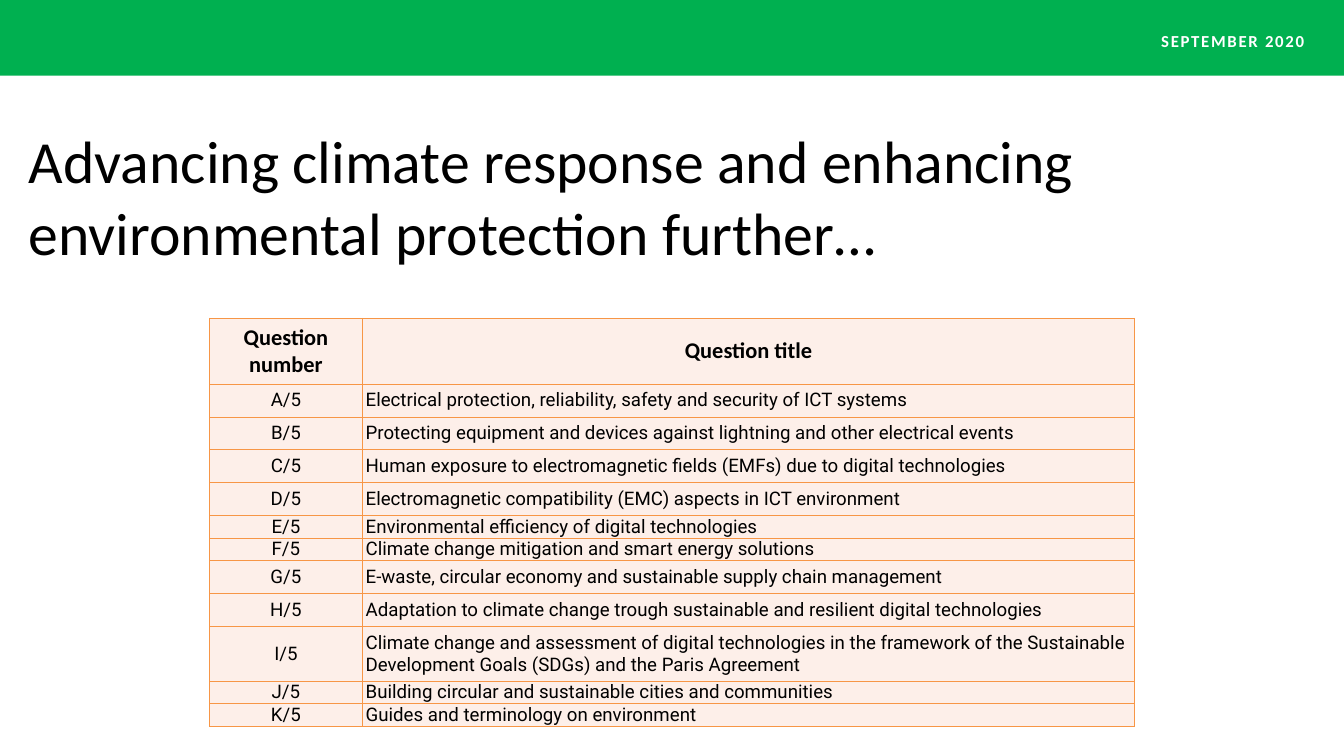
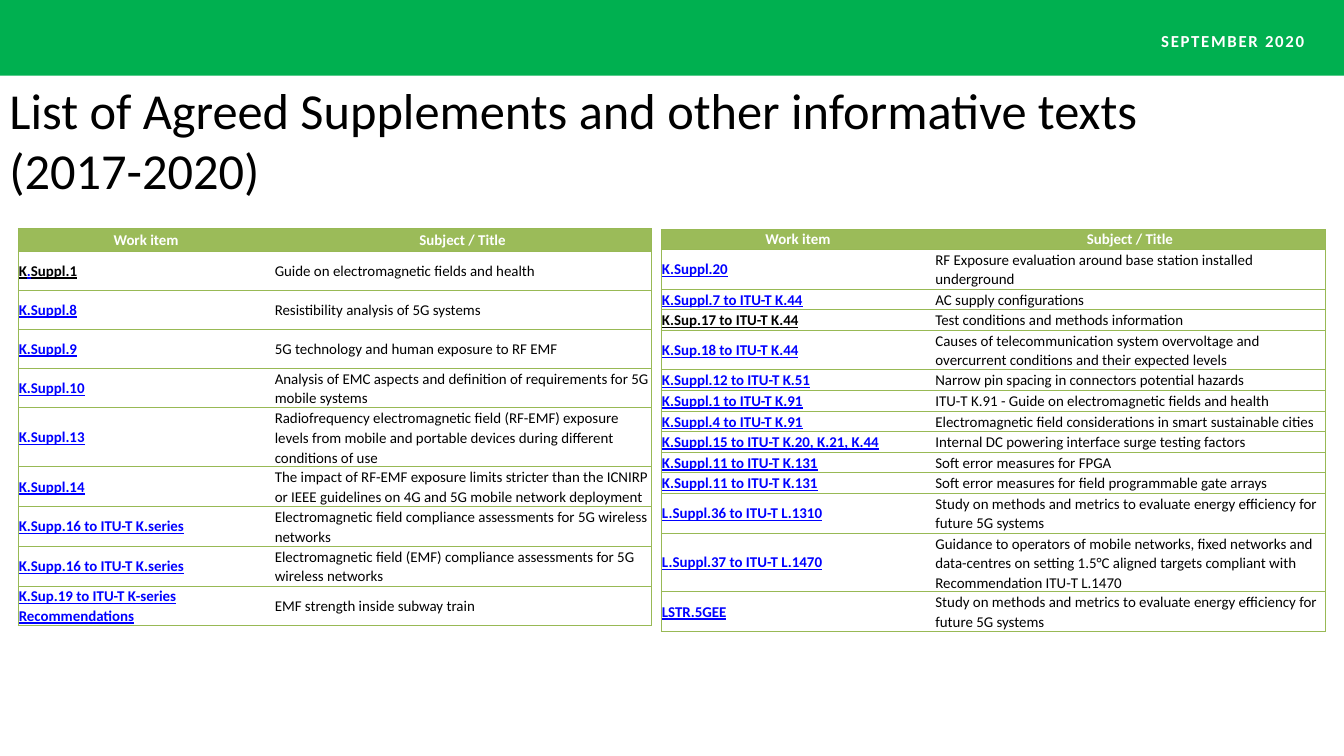
from dataclasses import dataclass

from lxml.etree import SubElement
from pptx import Presentation
from pptx.dml.color import RGBColor
from pptx.enum.shapes import MSO_SHAPE
from pptx.enum.text import MSO_ANCHOR, MSO_AUTO_SIZE, PP_ALIGN
from pptx.oxml.ns import qn
from pptx.util import Pt

# Content
DATE = "SEPTEMBER 2020"

QUESTIONS_TITLE = "Advancing climate response and enhancing environmental protection further…"
QUESTIONS_HEAD = ("Question number", "Question title")
# Row height in points, number, title
QUESTIONS = [
    (35.3, "A/5", "Electrical protection, reliability, safety and security of ICT systems"),
    (35.3, "B/5", "Protecting equipment and devices against lightning and other electrical events"),
    (35.3, "C/5", "Human exposure to electromagnetic fields (EMFs) due to digital technologies"),
    (35.3, "D/5", "Electromagnetic compatibility (EMC) aspects in ICT environment"),
    (23.8, "E/5", "Environmental efficiency of digital technologies"),
    (23.8, "F/5", "Climate change mitigation and smart energy solutions"),
    (35.3, "G/5", "E-waste, circular economy and sustainable supply chain management"),
    (35.3, "H/5", "Adaptation to climate change trough sustainable and resilient digital technologies"),
    (58.6, "I/5", "Climate change and assessment of digital technologies in the framework of the "
                  "Sustainable Development Goals (SDGs) and the Paris Agreement"),
    (23.8, "J/5", "Building circular and sustainable cities and communities"),
    (23.8, "K/5", "Guides and terminology on environment"),
]

SUPPLEMENTS_TITLE = "List of Agreed Supplements and other informative texts (2017-2020)"
SUPPLEMENTS_HEAD = ("Work item", "Subject / Title")
# Row height in text lines, work item (a link, or runs with their colours), subject
K_SERIES = [
    (2, [("K", "ink"), (".", "link"), ("Suppl.1", "ink")],
     "Guide on electromagnetic fields and health"),
    (2, "K.Suppl.8", "Resistibility analysis of 5G systems"),
    (2, "K.Suppl.9", "5G technology and human exposure to RF EMF"),
    (2, "K.Suppl.10",
     "Analysis of EMC aspects and definition of requirements for 5G mobile systems"),
    (3, "K.Suppl.13", "Radiofrequency electromagnetic field (RF-EMF) exposure levels from mobile "
                      "and portable devices during different conditions of use"),
    (2, "K.Suppl.14", "The impact of RF-EMF exposure limits stricter than the ICNIRP or IEEE "
                      "guidelines on 4G and 5G mobile network deployment"),
    (2, "K.Supp.16 to ITU-T K.series",
     "Electromagnetic field compliance assessments for 5G wireless networks"),
    (2, "K.Supp.16 to ITU-T K.series",
     "Electromagnetic field (EMF) compliance assessments for 5G wireless networks"),
    (2, "K.Sup.19 to ITU-T K-series Recommendations", "EMF strength inside subway train"),
]
OTHER_SERIES = [
    (2, "K.Suppl.20", "RF Exposure evaluation around base station installed underground"),
    (1, "K.Suppl.7 to ITU-T K.44", "AC supply configurations"),
    (1, [("K.Sup.17 to ITU-T K.44", "ink")], "Test conditions and methods information"),
    (2, "K.Sup.18 to ITU-T K.44", "Causes of telecommunication system overvoltage and "
                                  "overcurrent conditions and their expected levels"),
    (1, "K.Suppl.12 to ITU-T K.51", "Narrow pin spacing in connectors potential hazards"),
    (1, "K.Suppl.1 to ITU-T K.91", "ITU-T K.91 - Guide on electromagnetic fields and health"),
    (1, "K.Suppl.4 to ITU-T K.91",
     "Electromagnetic field considerations in smart sustainable cities"),
    (1, "K.Suppl.15 to ITU-T K.20, K.21, K.44",
     "Internal DC powering interface surge testing factors"),
    (1, "K.Suppl.11 to ITU-T K.131", "Soft error measures for FPGA"),
    (1, "K.Suppl.11 to ITU-T K.131", "Soft error measures for field programmable gate arrays"),
    (2, "L.Suppl.36 to ITU-T L.1310", "Study on methods and metrics to evaluate energy "
                                      "efficiency for future 5G systems"),
    (3, "L.Suppl.37 to ITU-T L.1470",
     "Guidance to operators of mobile networks, fixed networks and data-centres on setting "
     "1.5°C aligned targets compliant with Recommendation ITU-T L.1470"),
    (2, "LSTR.5GEE", "Study on methods and metrics to evaluate energy efficiency for future "
                     "5G systems"),
]


# Theme
@dataclass(frozen=True)
class Theme:
    ink: str = "000000"
    link: str = "0000FF"
    white: str = "FFFFFF"
    band: str = "00B050"
    peach: str = "FDEFE9"
    orange: str = "F79646"
    olive: str = "9BBB59"
    olive_line: str = "98B955"
    font: str = "Calibri"
    body_font: str = "Roboto"
    date_size: float = 18
    question_head_size: float = 24
    question_size: float = 20
    supplement_size: float = 16


T = Theme()
SLIDE_W, SLIDE_H, BAND_H = 1440, 810, 81
LINE_H = 20.85
NO_STYLE = "{2D5ABB26-0587-4C30-8999-92F81FD0307C}"


# Helpers
def style(r, size, color=T.ink, font=T.font, bold=False, underline=False):
    f = r.font
    f.name, f.size, f.bold, f.underline = font, Pt(size), bold, underline
    f.color.rgb = RGBColor.from_string(color)


def add_page(prs, title, size, box):
    """Slide with its title, the green band and the date."""
    s = prs.slides.add_slide(prs.slide_layouts[5])
    sp = s.shapes.title
    sp.left, sp.top, sp.width, sp.height = map(Pt, box)
    tf = sp.text_frame
    tf.text = title
    tf.word_wrap, tf.auto_size = True, MSO_AUTO_SIZE.SHAPE_TO_FIT_TEXT
    tf.vertical_anchor = MSO_ANCHOR.TOP
    tf.paragraphs[0].alignment = PP_ALIGN.LEFT
    style(tf.paragraphs[0].runs[0], size)

    band = s.shapes.add_shape(MSO_SHAPE.RECTANGLE, 0, 0, Pt(SLIDE_W), Pt(BAND_H))
    band.shadow.inherit = False
    band.fill.solid()
    band.fill.fore_color.rgb = RGBColor.from_string(T.band)
    band.line.fill.background()

    tf = s.shapes.add_textbox(Pt(734.4), Pt(33.1), Pt(663.1), Pt(21)).text_frame
    tf.text = DATE
    tf.word_wrap, tf.auto_size = True, MSO_AUTO_SIZE.SHAPE_TO_FIT_TEXT
    tf.margin_left = tf.margin_right = tf.margin_top = tf.margin_bottom = 0
    p = tf.paragraphs[0]
    p.alignment, p.line_spacing = PP_ALIGN.RIGHT, Pt(21.6)
    style(p.runs[0], T.date_size, T.white, bold=True)
    p.runs[0].font._element.set("spc", "180")
    return s


def add_plain_table(s, left, top, widths, heights):
    frame = s.shapes.add_table(len(heights), len(widths), Pt(left), Pt(top),
                               Pt(sum(widths)), Pt(sum(heights)))
    frame.element.find(".//" + qn("a:tableStyleId")).text = NO_STYLE
    table = frame.table
    table.first_row = table.horz_banding = False
    for column, width in zip(table.columns, widths):
        column.width = Pt(width)
    for row, height in zip(table.rows, heights):
        row.height = Pt(height)
    return table


def fill_cell(cell, runs, align, margins, border, sides, fill=None):
    """Put (text, style) runs in a cell and return its paragraph."""
    cell.margin_left = cell.margin_right = Pt(margins[0])
    cell.margin_top = cell.margin_bottom = Pt(margins[1])
    cell.vertical_anchor = MSO_ANCHOR.MIDDLE
    p = cell.text_frame.paragraphs[0]
    p.alignment = align
    for text, look in runs:
        r = p.add_run()
        r.text = text
        style(r, **look)
    # Borders come before the fill in the cell properties
    color, width = border
    tcPr = cell._tc.get_or_add_tcPr()
    for side in sides:
        ln = SubElement(tcPr, qn("a:ln" + side), w=str(Pt(width)))
        SubElement(SubElement(ln, qn("a:solidFill")), qn("a:srgbClr"), val=color)
    if fill:
        cell.fill.solid()
        cell.fill.fore_color.rgb = RGBColor.from_string(fill)
    else:
        cell.fill.background()
    return p


def add_questions(s):
    rows = [(70.5, *QUESTIONS_HEAD)] + QUESTIONS
    table = add_plain_table(s, 224.6, 340.9, (163.6, 827.6), [row[0] for row in rows])
    head = dict(size=T.question_head_size, bold=True)
    body = dict(size=T.question_size, font=T.body_font)
    for i, (_, *texts) in enumerate(rows):
        for j, text in enumerate(texts):
            align = PP_ALIGN.LEFT if i and j else PP_ALIGN.CENTER
            fill_cell(table.cell(i, j), [(text, body if i else head)], align, (3.6, 0),
                      (T.orange, 1), "LRTB", T.peach)


def add_supplements(s, left, top, widths, head_h, items):
    heights = [head_h] + [lines * LINE_H for lines, _, _ in items]
    table = add_plain_table(s, left, top, widths, heights)
    size, margins, border = T.supplement_size, (0.75, 0.75), (T.olive_line, 0.75)
    outer = ("LTB", "RTB")
    for j, text in enumerate(SUPPLEMENTS_HEAD):
        look = dict(size=size, color=T.white, bold=True)
        fill_cell(table.cell(0, j), [(text, look)], PP_ALIGN.CENTER, margins, border,
                  outer[j], T.olive)
    for i, (_, item, subject) in enumerate(items, 1):
        parts = [(item, "link")] if isinstance(item, str) else item
        links = [(text, dict(size=size, color=getattr(T, role), bold=True, underline=True))
                 for text, role in parts]
        for j, runs in enumerate((links, [(subject, dict(size=size))])):
            p = fill_cell(table.cell(i, j), runs, PP_ALIGN.LEFT, margins, border, outer[j])
            p.line_spacing, p.space_after = 1.07, Pt(8)


def main():
    prs = Presentation()
    prs.slide_width, prs.slide_height = Pt(SLIDE_W), Pt(SLIDE_H)

    # Questions
    s = add_page(prs, QUESTIONS_TITLE, 64, (23.8, 128.9, 1373, 162.7))
    add_questions(s)

    # Supplements
    s = add_page(prs, SUPPLEMENTS_TITLE, 54, (2.9, BAND_H, 1297.4, 138.2))
    add_supplements(s, 19.4, 244.8, (274.3, 403.9), 24.5, K_SERIES)
    add_supplements(s, 708.5, 246.2, (293, 418.3), LINE_H, OTHER_SERIES)

    prs.save("out.pptx")


if __name__ == "__main__":
    main()
